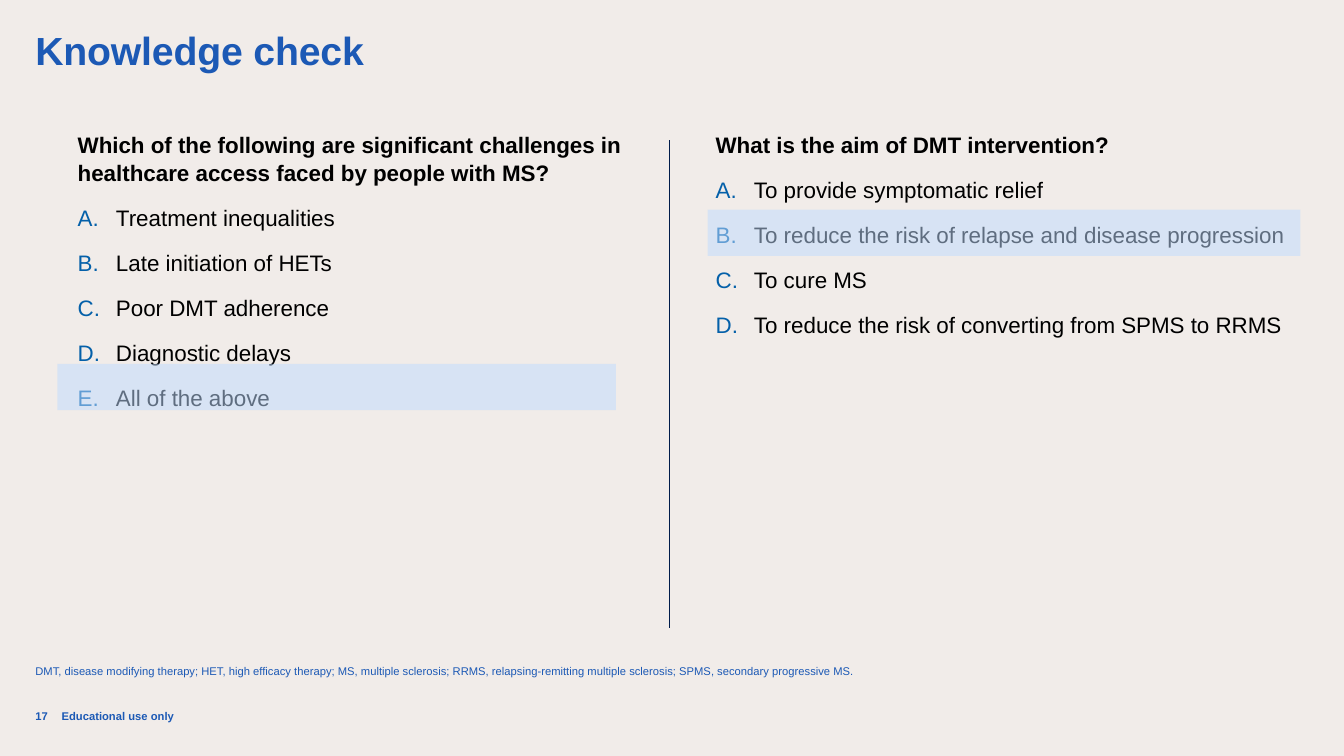
from lxml.etree import SubElement
from pptx import Presentation
from pptx.dml.color import RGBColor
from pptx.enum.shapes import MSO_CONNECTOR, MSO_SHAPE
from pptx.enum.text import MSO_ANCHOR
from pptx.oxml.ns import qn
from pptx.util import Inches, Pt

BACKGROUND = RGBColor(0xF1, 0xEC, 0xE9)
BRAND_BLUE = RGBColor(0x1C, 0x59, 0xB5)
LETTER_BLUE = RGBColor(0x04, 0x60, 0xA9)
DIVIDER_NAVY = RGBColor(0x00, 0x1C, 0x4A)
HIGHLIGHT_BLUE = RGBColor(0xBE, 0xDB, 0xFF)
BLACK = RGBColor(0, 0, 0)

SLIDE_WIDTH = Inches(13.33)
SLIDE_HEIGHT = Inches(7.5)
GRID = 100
MARGIN = 2.63
FULL_WIDTH = 94.75
FOOTER_ROW = 93.87
QUESTION_ROW = 17.2
HIGHLIGHT_HEIGHT = 6.13

QUESTIONS = [
    (5.78, 40.65,
     "Which of the following are significant challenges in healthcare access faced by people with MS?",
     ["Treatment inequalities", "Late initiation of HETs", "Poor DMT adherence",
      "Diagnostic delays", "All of the above"]),
    (53.25, 44.1,
     "What is the aim of DMT intervention?",
     ["To provide symptomatic relief",
      "To reduce the risk of relapse and disease progression",
      "To cure MS",
      "To reduce the risk of converting from SPMS to RRMS"]),
]
ANSWER_HIGHLIGHTS = [(4.28, 48.13, 41.55), (52.65, 27.73, 44.1)]
ABBREVIATIONS = (
    "DMT, disease modifying therapy; HET, high efficacy therapy; MS, multiple sclerosis; "
    "RRMS, relapsing-remitting multiple sclerosis; SPMS, secondary progressive MS."
)


def across(columns):
    return round(SLIDE_WIDTH * columns / GRID)


def down(rows):
    return round(SLIDE_HEIGHT * rows / GRID)


def add_box(slide, left, top, width, height, anchor=MSO_ANCHOR.TOP):
    box = slide.shapes.add_textbox(across(left), down(top), across(width), down(height))
    frame = box.text_frame
    frame.word_wrap = True
    frame.vertical_anchor = anchor
    frame.margin_left = frame.margin_top = frame.margin_right = frame.margin_bottom = 0
    return frame


def add_span(para, text, size, color, bold=False):
    span = para.add_run()
    span.text = text
    span.font.name = "Arial"
    span.font.size = Pt(size)
    span.font.bold = bold
    span.font.color.rgb = color
    return span


def add_letter(para):
    properties = para._p.get_or_add_pPr()
    properties.set("marL", str(Inches(0.38)))
    properties.set("indent", str(-Inches(0.38)))
    bullet_color = SubElement(properties, qn("a:buClr"))
    SubElement(bullet_color, qn("a:srgbClr"), val=str(LETTER_BLUE))
    SubElement(properties, qn("a:buFont"), typeface="Arial")
    SubElement(properties, qn("a:buAutoNum"), type="alphaUcPeriod")


def add_question(slide, left, width, question, options):
    frame = add_box(slide, left, QUESTION_ROW, width, 67.33)
    heading = frame.paragraphs[0]
    heading.line_spacing = 1.05
    add_span(heading, question, 16, BLACK, bold=True)
    for option in options:
        para = frame.add_paragraph()
        add_letter(para)
        para.line_spacing = 1.05
        para.space_before = Pt(12)
        add_span(para, option, 16, BLACK)


def add_highlight(slide, left, top, width):
    band = slide.shapes.add_shape(
        MSO_SHAPE.RECTANGLE, across(left), down(top), across(width), down(HIGHLIGHT_HEIGHT))
    band.shadow.inherit = False
    band.line.fill.background()
    band.fill.solid()
    band.fill.fore_color.rgb = HIGHLIGHT_BLUE
    color = band._element.spPr.find(qn("a:solidFill")).find(qn("a:srgbClr"))
    SubElement(color, qn("a:alpha"), val="50000")


def add_divider(slide, column, top, bottom):
    divider = slide.shapes.add_connector(
        MSO_CONNECTOR.STRAIGHT, across(column), down(top), across(column), down(bottom))
    divider.line.color.rgb = DIVIDER_NAVY
    divider.line.width = Pt(0.5)
    SubElement(divider._element.spPr, qn("a:effectLst"))


def add_title(slide, text):
    frame = add_box(slide, MARGIN, 3.47, FULL_WIDTH, 16.13)
    span = add_span(frame.paragraphs[0], text, 28, BRAND_BLUE, bold=True)
    span.font._element.set("spc", "-10")


def add_abbreviations(slide, text):
    frame = add_box(slide, MARGIN, 80.4, FULL_WIDTH, 9.33, MSO_ANCHOR.BOTTOM)
    para = frame.paragraphs[0]
    para.line_spacing = 0.95
    add_span(para, text, 8, BRAND_BLUE)


def add_footer(slide, left, width, text):
    frame = add_box(slide, left, FOOTER_ROW, width, 2.67)
    add_span(frame.paragraphs[0], text, 8, BRAND_BLUE, bold=True)


def main():
    deck = Presentation()
    deck.slide_width = SLIDE_WIDTH
    deck.slide_height = SLIDE_HEIGHT
    page = deck.slides.add_slide(deck.slide_layouts[6])
    page.background.fill.solid()
    page.background.fill.fore_color.rgb = BACKGROUND

    add_footer(page, 4.58, 33.75, "Educational use only")
    add_footer(page, MARGIN, 1.65, "17")
    add_title(page, "Knowledge check")
    add_abbreviations(page, ABBREVIATIONS)
    for question in QUESTIONS:
        add_question(page, *question)
    add_divider(page, 49.8, 18.53, 83.07)
    for highlight in ANSWER_HIGHLIGHTS:
        add_highlight(page, *highlight)

    deck.save("out.pptx")


if __name__ == "__main__":
    main()
